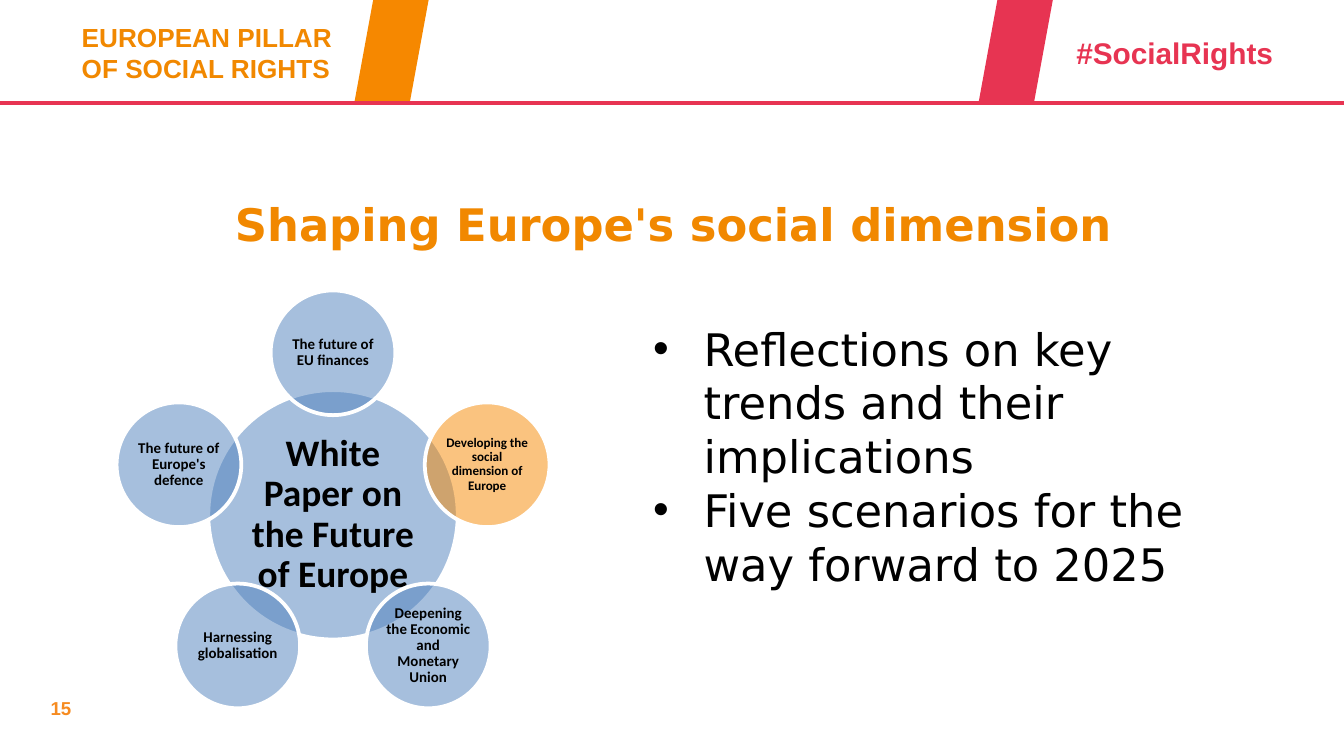
import math
from lxml import etree
from pptx import Presentation
from pptx import util as u
from pptx.dml.color import RGBColor
from pptx.enum import shapes, text
from pptx.oxml.ns import qn

Pt = u.Pt
HUES = {"gold": "F18800", "page": "F68B20", "band": "F68800", "red": "E73452",
        "blue": "4F81BD", "white": "FFFFFF", "black": "000000"}
MID, LEFT = text.PP_ALIGN.CENTER, text.PP_ALIGN.LEFT


def hue(name):
    return RGBColor.from_string(HUES[name])


def apply(item, vals):
    for key, val in vals.items():
        setattr(item, key, val)


class Deck:
    def __init__(self, slide):
        self.slide = slide
        self.para = {"space_before": Pt(0), "space_after": Pt(0)}

    def place(self, shape, box):
        apply(shape, dict(zip(("left", "top", "width", "height"), map(Pt, box))))

    def fill_text(self, frame, lines, font, size, color, bold=True, align=LEFT, space=1.0, bullet=None):
        apply(frame, {"word_wrap": True, "auto_size": text.MSO_AUTO_SIZE.NONE})
        for i, line in enumerate(lines):
            para = frame.add_paragraph() if i else frame.paragraphs[0]
            para.text = line
            apply(para, {**self.para, "alignment": align, "line_spacing": space})
            if bullet:
                props = para._p.get_or_add_pPr()
                props.set("marL", str(Pt(27)))
                props.set("indent", str(-Pt(27)))
                etree.SubElement(props, qn("a:buFont")).set("typeface", "Arial")
                etree.SubElement(props, qn("a:buChar")).set("char", bullet)
            for run in para.runs:
                apply(run.font, {"name": font, "size": Pt(size), "bold": bold})
                run.font.color.rgb = hue(color)

    def label(self, box, line, size, color):
        shape = self.slide.shapes.add_textbox(*map(Pt, box))
        self.fill_text(shape.text_frame, [line], "Arial", size, color)

    def holder(self, index, box, lines, anchor, **style):
        shape = self.slide.placeholders[index]
        self.place(shape, box)
        shape.text_frame.vertical_anchor = anchor
        self.fill_text(shape.text_frame, lines, "DejaVu Sans", 24, **style)

    def band(self, left, color):
        shape = self.slide.shapes.add_shape(
            shapes.MSO_SHAPE.PARALLELOGRAM, Pt(left), Pt(0), Pt(39.6), Pt(54))
        shape.shadow.inherit = False
        shape.fill.solid()
        shape.fill.fore_color.rgb = hue(color)
        shape.line.fill.background()

    def rule(self, y, color):
        line = self.slide.shapes.add_connector(
            shapes.MSO_CONNECTOR.STRAIGHT, Pt(0), Pt(y), Pt(720), Pt(y))
        line.line.width = Pt(2.25)
        line.line.color.rgb = hue(color)
        etree.SubElement(line._element.spPr, qn("a:effectLst"))

    def disc(self, group, x, y, size, line, points, color, inset):
        shape = group.shapes.add_shape(
            shapes.MSO_SHAPE.OVAL, Pt(x - size / 2), Pt(y - size / 2), Pt(size), Pt(size))
        shape.shadow.inherit = False
        shape.fill.solid()
        shape.fill.fore_color.rgb = hue(color)
        tint = shape._element.spPr.find(".//" + qn("a:srgbClr"))
        etree.SubElement(tint, qn("a:alpha")).set("val", "50000")
        shape.line.width = Pt(2)
        shape.line.color.rgb = hue("white")
        frame = shape.text_frame
        sides = ("margin_left", "margin_top", "margin_right", "margin_bottom")
        apply(frame, {**dict.fromkeys(sides, Pt(inset)), "vertical_anchor": text.MSO_ANCHOR.MIDDLE})
        self.fill_text(frame, [line], "Calibri", points, "black", align=MID, space=0.9)


def main():
    show = Presentation()
    apply(show, {"slide_width": Pt(720), "slide_height": Pt(405)})
    deck = Deck(show.slides.add_slide(show.slide_layouts[1]))

    # Header and page number
    deck.label((20, 370, 157, 19.5), "15", 10, "page")
    deck.label((36.7, 8, 183, 41), "EUROPEAN PILLAR\vOF SOCIAL RIGHTS", 14, "gold")
    deck.rule(55.2, "red")
    deck.label((569.5, 15, 124.5, 26.6), "#SocialRights", 16, "red")
    deck.band(190, "band")
    deck.band(524.4, "red")

    # Title
    deck.holder(0, (36.7, 92.2, 648, 55.4), ["Shaping Europe's social dimension"],
                text.MSO_ANCHOR.MIDDLE, color="gold", align=MID)

    # White paper hub with its papers set clockwise from the top
    group = deck.slide.shapes.add_group_shape()
    x, y, reach = 178.4, 275.8, 86.8
    deck.disc(group, x, y, 133.6, "White Paper on the Future of Europe", 20, "blue", 2)
    papers = [("The future of EU finances", 8, "blue"),
              ("Developing the social dimension of Europe", 7, "band"),
              ("Deepening the Economic and Monetary Union", 8, "blue"),
              ("Harnessing globalisation", 8, "blue"),
              ("The future of Europe's defence", 8, "blue")]
    for i, (line, points, color) in enumerate(papers):
        turn = math.tau * i / len(papers)
        deck.disc(group, x + reach * math.sin(turn), y - reach * math.cos(turn),
                  66.8, line, points, color, 0.8)

    # Key points
    deck.holder(1, (342.7, 168.5, 335, 181.4),
                ["Reflections on key trends and their implications",
                 "Five scenarios for the way forward to 2025"],
                text.MSO_ANCHOR.TOP, color="black", bold=False, bullet="•")

    show.save("out.pptx")


if __name__ == "__main__":
    main()
